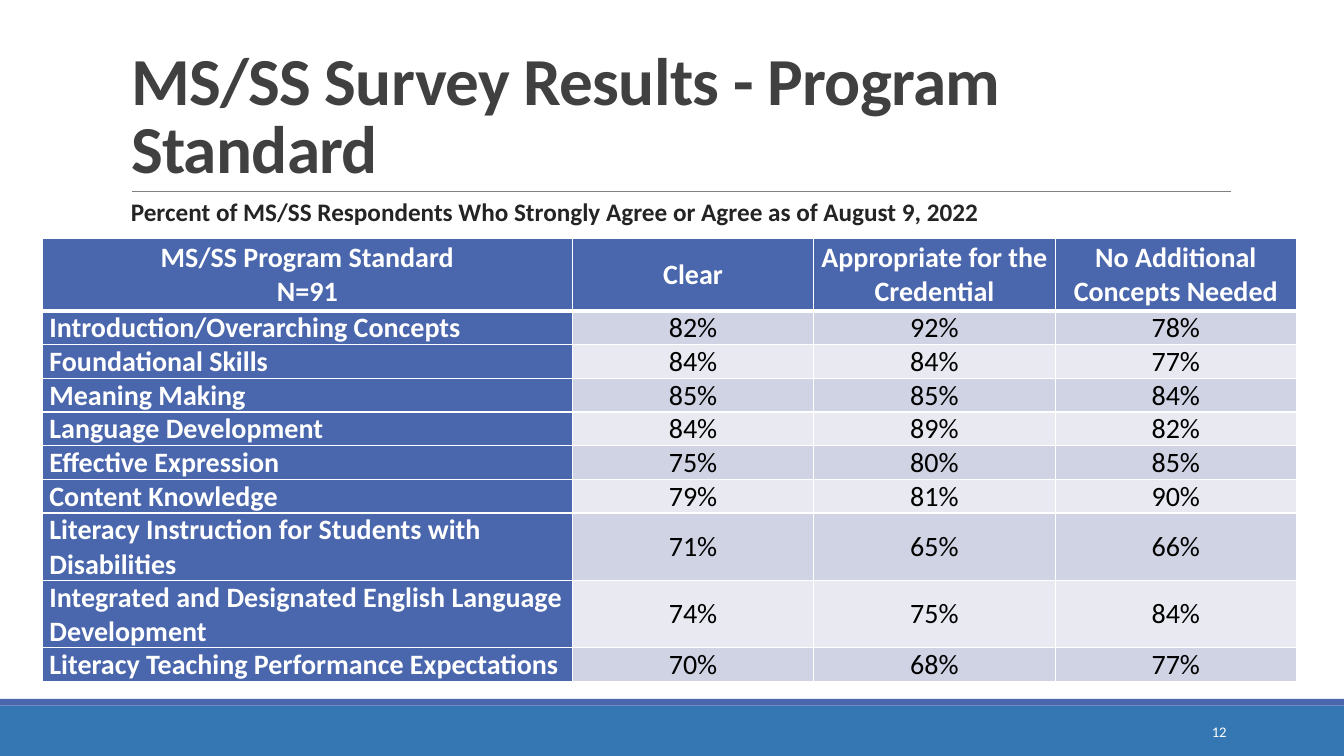
from lxml import etree
from pptx import Presentation
from pptx import util as u
from pptx.dml.color import RGBColor
from pptx.enum import shapes, text
from pptx.oxml.ns import qn

COLUMNS, ROWS = 160, 90
HEADER = ["MS/SS Program Standard\nN=91", "Clear",
          "Appropriate for the Credential", "No Additional Concepts Needed"]
STANDARDS = [
    ("Introduction/Overarching Concepts", 82, 92, 78),
    ("Foundational Skills", 84, 84, 77),
    ("Meaning Making", 85, 85, 84),
    ("Language Development", 84, 89, 82),
    ("Effective Expression", 75, 80, 85),
    ("Content Knowledge", 79, 81, 90),
    ("Literacy Instruction for Students with Disabilities", 71, 65, 66),
    ("Integrated and Designated English Language Development", 74, 75, 84),
    ("Literacy Teaching Performance Expectations", 70, 68, 77),
]


def color(hex_code):
    return RGBColor.from_string(hex_code)


def write(frame, words, size=20, ink="000000", bold=False, align="LEFT",
          anchor="TOP", spacing=None, tracking=None):
    """Fill a text frame, one paragraph per line of words."""
    frame.word_wrap = True
    frame.vertical_anchor = text.MSO_ANCHOR[anchor]
    frame.text = words
    for paragraph in frame.paragraphs:
        paragraph.alignment = text.PP_ALIGN[align]
        paragraph.line_spacing = spacing
        for run in paragraph.runs:
            run.font.name = "Calibri"
            run.font.size = u.Pt(size)
            run.font.bold = bold
            run.font.color.rgb = color(ink)
            if tracking is not None:
                run.font._element.set("spc", str(round(tracking * 100)))


class SurveySlide:
    """Style and current slide; lengths are grid columns and rows."""
    blue, footer_blue = "4A66AC", "3477B2"
    bands = ("D0D3E3", "E9EAF1")
    white, grey, title_ink, caption_ink = "FFFFFF", "808080", "404040", "242424"

    def __init__(self, deck):
        self.column = deck.slide_width / COLUMNS
        self.row = deck.slide_height / ROWS
        self.slide = deck.slides.add_slide(deck.slide_layouts[5])

    def box(self, x, y, width, height):
        return (round(x * self.column), round(y * self.row),
                round(width * self.column), round(height * self.row))

    def band(self, x, y, width, height, fill):
        strip = self.slide.shapes.add_shape(
            shapes.MSO_SHAPE.RECTANGLE, *self.box(x, y, width, height))
        strip.shadow.inherit = False
        strip.fill.solid()
        strip.fill.fore_color.rgb = color(fill)
        strip.line.fill.background()

    def rule(self, x, y, width):
        left, top, length, _ = self.box(x, y, width, 0)
        divider = self.slide.shapes.add_connector(
            shapes.MSO_CONNECTOR.STRAIGHT, left, top, left + length, top)
        divider.line.color.rgb = color(self.grey)
        divider.line.width = u.Pt(0.5)
        etree.SubElement(divider._element.spPr, qn("a:effectLst"))

    def title(self, words, x, y, width, height):
        heading = self.slide.shapes.title
        heading.left, heading.top, heading.width, heading.height = self.box(
            x, y, width, height)
        write(heading.text_frame, words, size=48, ink=self.title_ink, bold=True,
              anchor="BOTTOM", spacing=0.85, tracking=-0.5)
        heading.text_frame.auto_size = text.MSO_AUTO_SIZE.NONE

    def label(self, words, x, y, width, height, **style):
        caption = self.slide.shapes.add_textbox(*self.box(x, y, width, height))
        write(caption.text_frame, words, **style)

    def borders(self, cell, top=1, bottom=1):
        properties = cell._tc.get_or_add_tcPr()
        sides = (("L", 1), ("R", 1), ("T", top), ("B", bottom))
        for place, (side, points) in enumerate(sides):
            edge = etree.Element(qn(f"a:ln{side}"), w=str(u.Pt(points)))
            fill = etree.SubElement(edge, qn("a:solidFill"))
            etree.SubElement(fill, qn("a:srgbClr"), val=self.white)
            properties.insert(place, edge)

    def cell(self, cell, words, fill, top=1, bottom=1, **style):
        cell.margin_left = cell.margin_right = u.Inches(0.07)
        cell.margin_top = cell.margin_bottom = 0
        write(cell.text_frame, words, **style)
        cell.vertical_anchor = text.MSO_ANCHOR[style.get("anchor", "TOP")]
        cell.fill.solid()
        cell.fill.fore_color.rgb = color(fill)
        self.borders(cell, top, bottom)

    def table(self, x, y, widths, heights):
        results = self.slide.shapes.add_table(
            len(heights), len(widths),
            *self.box(x, y, sum(widths), sum(heights))).table
        for column, width in zip(results.columns, widths):
            column.width = round(width * self.column)
        for row, height in zip(results.rows, heights):
            row.height = round(height * self.row)

        centred = dict(align="CENTER", anchor="MIDDLE")
        named = dict(ink=self.white, bold=True)
        for c, heading in enumerate(HEADER):
            self.cell(results.cell(0, c), heading, self.blue, bottom=3,
                      **named, **centred)
        for r, (standard, *percents) in enumerate(STANDARDS, 1):
            top = 3 if r == 1 else 1
            self.cell(results.cell(r, 0), standard, self.blue, top=top, **named)
            for c, percent in enumerate(percents, 1):
                self.cell(results.cell(r, c), f"{percent}%",
                          self.bands[(r - 1) % 2], top=top, **centred)


def main():
    deck = Presentation()
    deck.slide_width, deck.slide_height = u.Inches(13.33), u.Inches(7.5)
    survey = SurveySlide(deck)

    # Footer bands and title rule
    survey.band(0, 84, COLUMNS, 6, survey.footer_blue)
    survey.band(0, 83.2, COLUMNS, 0.8, survey.blue)
    survey.rule(15.7, 22.8, 130.8)

    # Title and caption
    survey.title("MS/SS Survey Results - Program Standard", 14.4, 3.8, 132, 19.1)
    survey.label("Percent of MS/SS Respondents Who Strongly Agree or Agree "
                 "as of August 9, 2022", 14.4, 22.8, 107.5, 4.8,
                 size=18, ink=survey.caption_ink, bold=True)

    # Survey results, with double height for the two wrapped standards
    heights = [8.6] + [8 if len(standard) > 45 else 4 for standard, *_ in STANDARDS]
    survey.table(5.04, 28.44, [63.1] + [28.74] * 3, heights)

    # Page number
    survey.label("12", 130, 84.7, 17.2, 4.8, size=10.5, ink=survey.white,
                 align="RIGHT", anchor="MIDDLE")
    deck.save("out.pptx")


if __name__ == "__main__":
    main()
